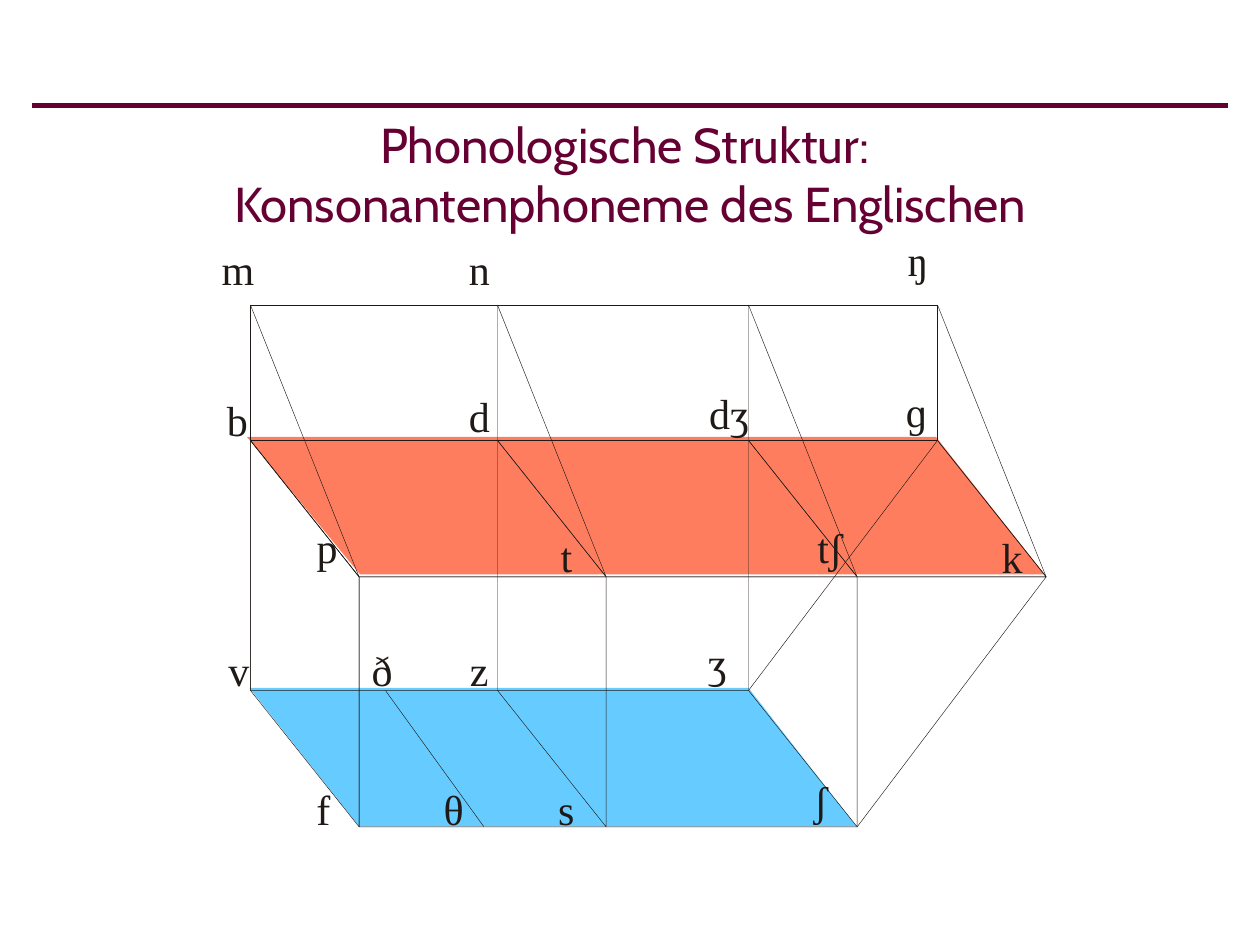
from dataclasses import dataclass

from lxml import etree
from pptx import Presentation
from pptx.dml.color import RGBColor
from pptx.enum.shapes import MSO_CONNECTOR, MSO_SHAPE
from pptx.enum.text import MSO_ANCHOR, PP_ALIGN
from pptx.oxml.ns import qn
from pptx.shapes.autoshape import Shape
from pptx.slide import Slide
from pptx.util import Cm, Pt

CENTER = PP_ALIGN.CENTER
MIDDLE = MSO_ANCHOR.MIDDLE
RECTANGLE = MSO_SHAPE.RECTANGLE
STRAIGHT = MSO_CONNECTOR.STRAIGHT

COLORS = {
    "title": "660033",
    "ink": "1F1A17",
    "stops": "FF7D5F",
    "fricatives": "66CCFF",
}
Point = tuple[float, float]

COLUMNS = {"labial": 5.05, "alveolar": 10.03, "palatal": 15.09, "velar": 18.9}
NASAL_Y, STOP_Y, FRICATIVE_Y = 6.15, 8.88, 13.92
DEPTH_X, DEPTH_Y = 2.19, 2.75
HAIRLINE = 0.25


@dataclass
class Phoneme:
    symbol: str
    left: float
    top: float
    width: float


@dataclass
class Plane:
    color: str
    corners: list[Point]


PLANES = [
    Plane("stops", [(4.98, 8.81), (7.26, 11.58), (21.06, 11.58), (18.87, 8.81)]),
    Plane("fricatives", [(5.03, 13.87), (7.24, 16.66), (17.27, 16.66), (15.09, 13.87)]),
]

PHONEMES = [
    Phoneme("m", 4.47, 4.9, 0.66),
    Phoneme("n", 9.45, 4.9, 0.43),
    Phoneme("ŋ", 18.29, 4.72, 0.43),
    Phoneme("p", 6.38, 10.52, 0.43),
    Phoneme("t", 11.3, 10.69, 0.23),
    Phoneme("tʃ", 16.33, 10.52, 0.81),
    Phoneme("k", 20.19, 10.72, 0.43),
    Phoneme("dʒ", 14.24, 7.82, 0.91),
    Phoneme("ɡ", 18.26, 7.77, 0.43),
    Phoneme("b", 4.57, 7.95, 0.43),
    Phoneme("d", 9.45, 7.87, 0.43),
    Phoneme("f", 6.38, 15.8, 0.28),
    Phoneme("v", 4.6, 13, 0.43),
    Phoneme("ʃ", 16.41, 15.62, 0.28),
    Phoneme("ʒ", 14.27, 12.83, 0.38),
    Phoneme("θ", 8.94, 15.8, 0.41),
    Phoneme("ð", 7.49, 13, 0.43),
    Phoneme("s", 11.25, 15.8, 0.33),
    Phoneme("z", 9.47, 13, 0.38),
]


def rgb(name: str) -> RGBColor:
    """Look up a colour by its role."""
    return RGBColor.from_string(COLORS[name])


def forward(point: Point) -> Point:
    """Move a point from the voiced to the voiceless face."""
    return point[0] + DEPTH_X, point[1] + DEPTH_Y


def outline(shape: Shape) -> None:
    """Leave only a hairline around a shape."""
    shape.shadow.inherit = False
    shape.fill.background()
    shape.line.color.rgb = rgb("ink")
    shape.line.width = Pt(HAIRLINE)


def add_polygon(slide: Slide, corners: list[Point]) -> Shape:
    """Draw a closed polygon through the corners."""
    start, *others = [(Cm(x), Cm(y)) for x, y in corners]
    builder = slide.shapes.build_freeform(*start)
    builder.add_line_segments(others, close=True)
    return builder.convert_to_shape()


def add_plane(slide: Slide, plane: Plane) -> None:
    """Draw a filled plane without a border."""
    shape = add_polygon(slide, plane.corners)
    shape.shadow.inherit = False
    shape.fill.solid()
    shape.fill.fore_color.rgb = rgb(plane.color)
    shape.line.fill.background()


def add_line(slide: Slide, start: Point, end: Point, color: str, width: float) -> None:
    """Draw a straight line without a shadow."""
    line = slide.shapes.add_connector(STRAIGHT, *[Cm(v) for v in (*start, *end)])
    line.line.color.rgb = rgb(color)
    line.line.width = Pt(width)
    etree.SubElement(line._element.spPr, qn("a:effectLst"))


def add_title(slide: Slide, lines: list[str]) -> None:
    """Write the centred title, one run per line."""
    box = slide.shapes.add_textbox(Cm(0.7), Cm(2.13), Cm(24), Cm(2.74))
    frame = box.text_frame
    frame.word_wrap = True
    frame.vertical_anchor = MIDDLE
    paragraph = frame.paragraphs[0]
    paragraph.alignment = CENTER
    for index, text in enumerate(lines):
        if index:
            paragraph.add_line_break()
        run = paragraph.add_run()
        run.text = text
        run.font.name = "Cabin"
        run.font.size = Pt(28)
        run.font.color.rgb = rgb("title")


def add_phoneme(slide: Slide, phoneme: Phoneme) -> None:
    """Write one phoneme symbol."""
    box = slide.shapes.add_textbox(
        Cm(phoneme.left), Cm(phoneme.top), Cm(phoneme.width), Cm(1.02)
    )
    frame = box.text_frame
    frame.word_wrap = False
    frame.margin_left = frame.margin_right = 0
    frame.margin_top = frame.margin_bottom = 0
    paragraph = frame.paragraphs[0]
    paragraph.alignment = CENTER
    run = paragraph.add_run()
    run.text = phoneme.symbol
    run.font.name = "Times New Roman"
    run.font.size = Pt(24)
    run.font.color.rgb = rgb("ink")


def add_lattice(slide: Slide) -> None:
    """Draw the hairline framework that links the phonemes."""
    left, palatal, right = COLUMNS["labial"], COLUMNS["palatal"], COLUMNS["velar"]
    voiced = [(left, STOP_Y), (right, STOP_Y), (palatal, FRICATIVE_Y), (left, FRICATIVE_Y)]
    voiceless = [forward(point) for point in voiced]
    stop_plane = [*voiced[:2], *reversed(voiceless[:2])]
    polygons = [voiced, voiceless, stop_plane]
    for name, x in COLUMNS.items():
        stop, fricative = (x, STOP_Y), (x, FRICATIVE_Y)
        polygons.append([(x, NASAL_Y), stop, forward(stop)])
        if name != "velar":
            polygons.append([stop, forward(stop), forward(fricative), fricative])
    for corners in polygons:
        outline(add_polygon(slide, corners))
    outline(slide.shapes.add_shape(
        RECTANGLE, Cm(left), Cm(NASAL_Y), Cm(right - left), Cm(STOP_Y - NASAL_Y)
    ))
    add_line(slide, (7.77, FRICATIVE_Y), (9.75, 16.66), "ink", HAIRLINE)


def main() -> None:
    """Build the slide on English consonant phonemes."""
    deck = Presentation()
    deck.slide_width, deck.slide_height = Cm(25.4), Cm(19.05)
    slide = deck.slides.add_slide(deck.slide_layouts[6])
    add_line(slide, (0.65, 2.13), (24.75, 2.13), "title", 3)
    for plane in PLANES:
        add_plane(slide, plane)
    add_title(slide, ["Phonologische Struktur: ", "Konsonantenphoneme des Englischen"])
    for phoneme in PHONEMES:
        add_phoneme(slide, phoneme)
    add_lattice(slide)
    deck.save("out.pptx")


if __name__ == "__main__":
    main()
